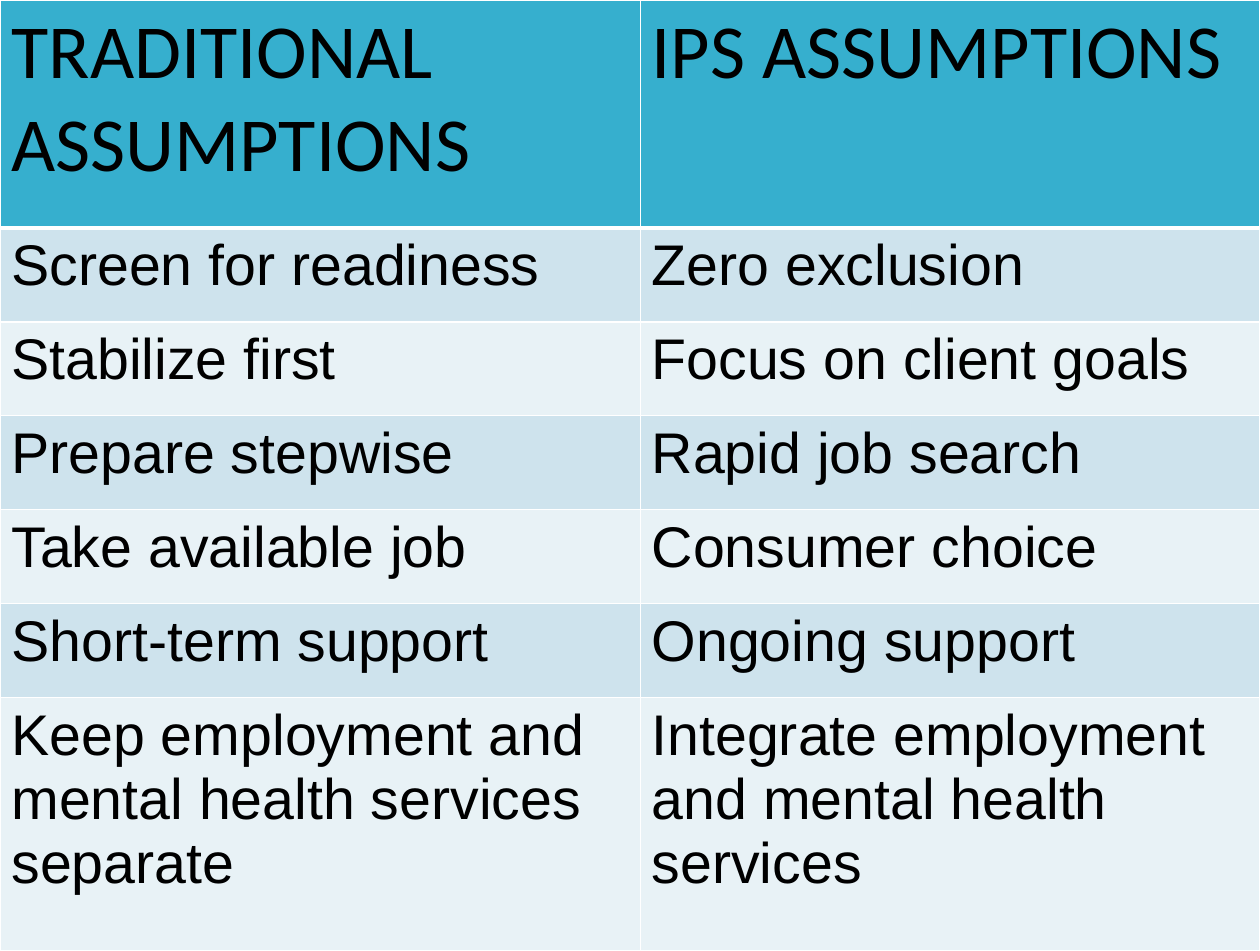
"""Build a slide comparing traditional and IPS employment assumptions."""
from dataclasses import dataclass

from lxml import etree
from pptx import Presentation
from pptx.dml.color import RGBColor
from pptx.enum.text import MSO_ANCHOR
from pptx.oxml.ns import qn
from pptx.util import Pt

PX = 9144
ANCHOR_TOP = MSO_ANCHOR.TOP
BLANK_LAYOUT = 6

SLIDE_SIZE = (1100, 830)
COLUMN_WIDTHS = (559, 541)
HEADER_HEIGHT, ROW_HEIGHT, LAST_HEIGHT = 199, 82, 221

ASSUMPTIONS = [
    ("TRADITIONAL ASSUMPTIONS", "IPS ASSUMPTIONS"),
    ("Screen for readiness", "Zero exclusion"),
    ("Stabilize first", "Focus on client goals"),
    ("Prepare stepwise", "Rapid job search"),
    ("Take available job", "Consumer choice"),
    ("Short-term support", "Ongoing support"),
    ("Keep employment and mental health services separate",
     "Integrate employment and mental health services"),
]


@dataclass(frozen=True)
class Theme:
    header_fill: str = "36AFCE"
    band_fills: tuple = ("CEE3ED", "E8F2F6")
    text_color: str = "000000"
    border_color: str = "FFFFFF"
    header_font: str = "Calibri"
    body_font: str = "Arial"
    header_size: int = 48
    body_size: int = 36
    border_width: int = 1
    header_rule_width: int = 3


def write_text(text_frame, text, *, font, size, color):
    run = text_frame.paragraphs[0].add_run()
    run.text = text
    run.font.name = font
    run.font.size = Pt(size)
    run.font.bold = False
    run.font.color.rgb = RGBColor.from_string(color)


class SlideBuilder:
    def __init__(self, slide, theme):
        self.slide = slide
        self.theme = theme

    def border(self, cell, side, width):
        line = etree.SubElement(cell._tc.get_or_add_tcPr(), qn(f"a:{side}"), w=str(Pt(width)))
        fill = etree.SubElement(line, qn("a:solidFill"))
        etree.SubElement(fill, qn("a:srgbClr"), val=self.theme.border_color)

    def cell(self, cell, text, row_index):
        theme = self.theme
        is_header = row_index == 0
        top_width = theme.header_rule_width if row_index == 1 else theme.border_width
        bottom_width = theme.header_rule_width if is_header else theme.border_width
        for side, width in (("lnL", theme.border_width), ("lnR", theme.border_width),
                            ("lnT", top_width), ("lnB", bottom_width)):
            self.border(cell, side, width)
        fill_color = theme.header_fill if is_header else theme.band_fills[(row_index - 1) % 2]
        cell.fill.solid()
        cell.fill.fore_color.rgb = RGBColor.from_string(fill_color)
        cell.vertical_anchor = ANCHOR_TOP
        write_text(
            cell.text_frame, text,
            font=theme.header_font if is_header else theme.body_font,
            size=theme.header_size if is_header else theme.body_size,
            color=theme.text_color,
        )

    def table(self, rows, left, top, column_widths, row_heights):
        frame = self.slide.shapes.add_table(
            len(rows), len(column_widths), left * PX, top * PX,
            sum(column_widths) * PX, sum(row_heights) * PX,
        )
        table = frame.table
        table.first_row = table.horz_banding = False
        for column, width in zip(table.columns, column_widths):
            column.width = width * PX
        for row_index, (row, height) in enumerate(zip(table.rows, row_heights)):
            row.height = height * PX
            for cell, text in zip(row.cells, rows[row_index]):
                self.cell(cell, text, row_index)


def main():
    presentation = Presentation()
    presentation.slide_width, presentation.slide_height = (side * PX for side in SLIDE_SIZE)
    slide = presentation.slides.add_slide(presentation.slide_layouts[BLANK_LAYOUT])
    row_heights = [HEADER_HEIGHT, *[ROW_HEIGHT] * (len(ASSUMPTIONS) - 2), LAST_HEIGHT]
    SlideBuilder(slide, Theme()).table(ASSUMPTIONS, 0, 0, COLUMN_WIDTHS, row_heights)
    presentation.save("out.pptx")


if __name__ == "__main__":
    main()
